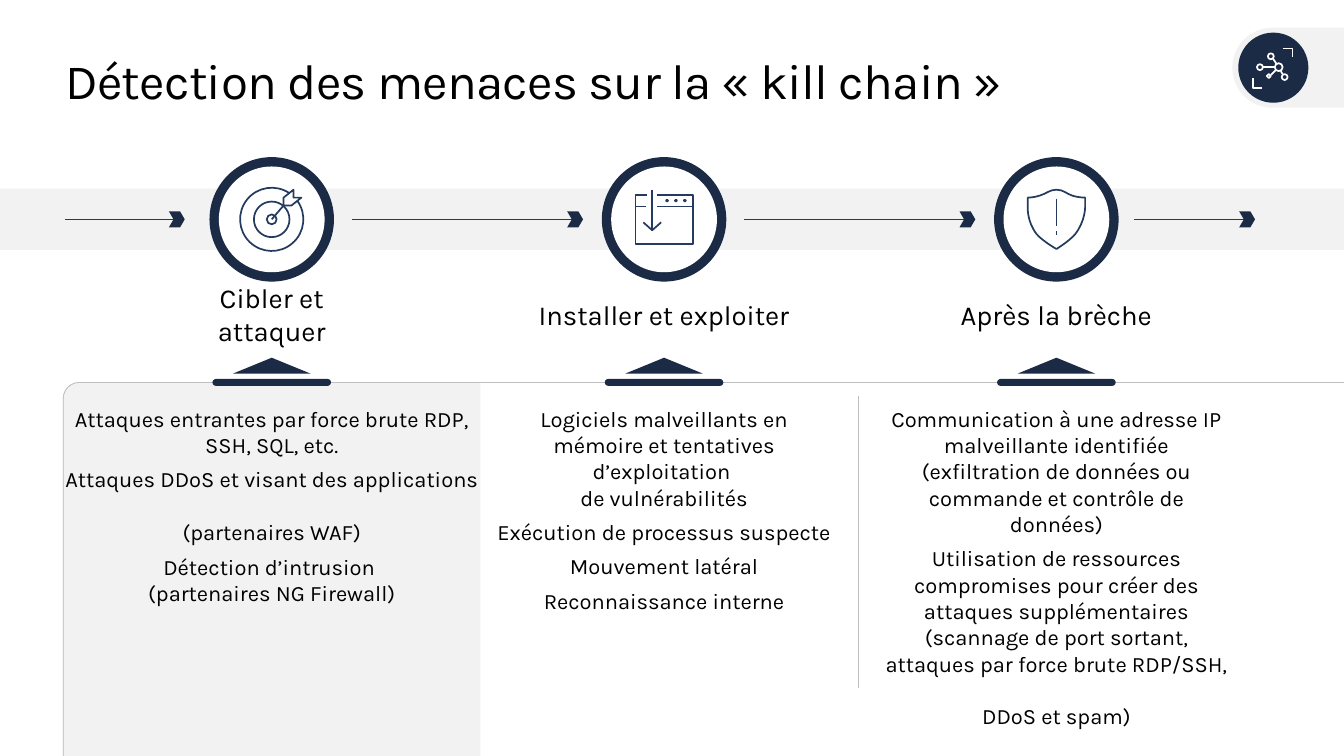
from math import ceil, cos, radians, sin, tan

from lxml.etree import SubElement
from pptx import Presentation
from pptx.dml.color import RGBColor
from pptx.enum.shapes import MSO_CONNECTOR, MSO_SHAPE
from pptx.enum.text import MSO_ANCHOR, MSO_AUTO_SIZE, PP_ALIGN
from pptx.oxml.ns import qn
from pptx.util import Inches, Pt

# Content: heading, heading width, text width, text height, paragraphs
TITLE = "Détection des menaces sur la «\u00a0kill chain\u00a0»"
STAGES = [
    ("Cibler et attaquer", 2.21, 4.19, 1.78, [
        "Attaques entrantes par force brute RDP, SSH, SQL, etc.",
        "Attaques DDoS et visant des applications \v(partenaires WAF)",
        "Détection d’intrusion \v(partenaires NG Firewall)",
    ]),
    ("Installer et exploiter", 2.55, 3.46, 1.87, [
        "Logiciels malveillants en mémoire et tentatives d’exploitation \vde vulnérabilités",
        "Exécution de processus suspecte",
        "Mouvement latéral",
        "Reconnaissance interne",
    ]),
    ("Après la brèche", 1.96, 3.51, 2.78, [
        "Communication à une adresse IP malveillante identifiée "
        "(exfiltration de données ou commande et contrôle de données)",
        "Utilisation de ressources compromises pour créer des attaques supplémentaires "
        "(scannage de port sortant, attaques par force brute RDP/SSH, \vDDoS et spam)",
    ]),
]
FLOW_SPANS = [(0.66, 1.76), (3.56, 5.79), (7.53, 9.76), (11.48, 12.59)]
COLORS = {"navy": "1B2B46", "ink": "243A5E", "band": "F2F2F2", "rule": "BFBFBF",
          "white": "FFFFFF", "text": "000000", "accent": "0078D4"}
FONT = "Karla"

# Grid
WIDTH, HEIGHT = 13.6, 7.65
CENTERS = [2.75 + 3.97 * column for column in range(3)]
FLOW_Y = 2.22
PANEL_LEFT, PANEL_TOP, PANEL_RIGHT, CORNER = 0.64, 3.87, 4.86, 0.16

presentation = Presentation()
presentation.slide_width, presentation.slide_height = Inches(WIDTH), Inches(HEIGHT)
slide = presentation.slides.add_slide(presentation.slide_layouts[6])


def rgb(name):
    return RGBColor.from_string(COLORS[name])


def style(shape, fill=None, line=None, weight=1.25):
    shape.shadow.inherit = False
    if fill:
        shape.fill.solid()
        shape.fill.fore_color.rgb = rgb(fill)
    else:
        shape.fill.background()
    if line:
        shape.line.color.rgb = rgb(line)
        shape.line.width = Pt(weight)
    else:
        shape.line.fill.background()


def add_preset(kind, left, top, width, height, fill, adjustments=(), **outline):
    shape = slide.shapes.add_shape(kind, *map(Inches, (left, top, width, height)))
    for index, value in enumerate(adjustments):
        shape.adjustments[index] = value
    style(shape, fill, **outline)
    return shape


def add_centered(kind, center, middle, width, height, fill, adjustments=()):
    add_preset(kind, center - width / 2, middle - height / 2, width, height, fill, adjustments)


def add_line(x1, y1, x2, y2, color, weight):
    line = slide.shapes.add_connector(MSO_CONNECTOR.STRAIGHT, *map(Inches, (x1, y1, x2, y2)))
    line.line.color.rgb = rgb(color)
    line.line.width = Pt(weight)
    SubElement(line._element.spPr, qn("a:effectLst"))


def add_text(paragraphs, left, top, width, height, size, align=PP_ALIGN.CENTER, after=0, wrap=True):
    box = slide.shapes.add_textbox(*map(Inches, (left, top, width, height)))
    frame = box.text_frame
    frame.word_wrap = wrap
    frame.auto_size = MSO_AUTO_SIZE.SHAPE_TO_FIT_TEXT
    frame.margin_left = frame.margin_right = frame.margin_top = frame.margin_bottom = 0
    for index, text in enumerate(paragraphs):
        paragraph = frame.paragraphs[0] if index == 0 else frame.add_paragraph()
        paragraph.text = text
        paragraph.alignment = align
        paragraph.space_after = Pt(after)
        paragraph.font.name, paragraph.font.size = FONT, Pt(size)
        paragraph.font.color.rgb = rgb("text")
    return frame


def arc(x, y, radius, start=0, end=360):
    """A start point, then one (control, control, end) curve per quarter turn."""
    count = ceil((end - start) / 90)
    step = radians((end - start) / count)
    reach = 4 / 3 * tan(step / 4)
    ends = [(cos(radians(start) + step * i), sin(radians(start) + step * i)) for i in range(count + 1)]

    def place(u, v):
        return x + radius * u, y + radius * v

    curves = [(place(a - reach * b, b + reach * a), place(c + reach * d, d - reach * c), place(c, d))
              for (a, b), (c, d) in zip(ends, ends[1:])]
    return [place(*ends[0])] + curves


def add_outline(strokes, **look):
    """Each stroke is a start point followed by points (lines) or triples of points (curves)."""
    builder = slide.shapes.build_freeform(*map(Inches, strokes[0][0]))
    curve_flags = []
    for index, (start, *steps) in enumerate(strokes):
        if index:
            builder.move_to(*map(Inches, start))
        points = []
        for step in steps:
            is_curve = len(step) == 3
            curve_flags.append(is_curve)
            points += step if is_curve else [step]
        closed = max(abs(a - b) for a, b in zip(start, points[-1])) < 0.001
        builder.add_line_segments([tuple(map(Inches, point)) for point in points], close=closed)
    shape = builder.convert_to_shape()
    segments = iter(list(shape._element.iter(qn("a:lnTo"))))
    for is_curve in curve_flags:
        segment = next(segments)
        if is_curve:
            segment.tag = qn("a:cubicBezTo")
            for extra in (next(segments), next(segments)):
                segment.append(extra[0])
                extra.getparent().remove(extra)
    style(shape, **look)


# Corner badge, first panel and flow band
badge = add_preset(MSO_SHAPE.ROUND_2_SAME_RECTANGLE, 12.63, 0.12, 0.81, 1.13, "band", (0.5, 0))
badge.rotation = 270
add_preset(MSO_SHAPE.OVAL, 12.53, 0.33, 0.71, 0.71, "navy")
corner = arc(PANEL_LEFT + CORNER, PANEL_TOP + CORNER, CORNER, 180, 270)
add_outline([corner + [(PANEL_RIGHT, PANEL_TOP), (PANEL_RIGHT, HEIGHT), (PANEL_LEFT, HEIGHT), corner[0]]],
            fill="band")
add_preset(MSO_SHAPE.RECTANGLE, 0, 1.91, WIDTH, 0.62, "band")

# Title and panel border
title = add_text([TITLE], 0.66, 0.51, 12.29, 0.62, 36, PP_ALIGN.LEFT)
title.paragraphs[0].font._element.set("spc", "-50")
add_preset(MSO_SHAPE.BENT_ARROW, PANEL_LEFT, PANEL_TOP, WIDTH - PANEL_LEFT, HEIGHT - PANEL_TOP,
           "accent", (0.25, 0, 0.25, 0.043), line="rule", weight=0.5)

# Stages
for center, (heading, heading_width, text_width, text_height, paragraphs) in zip(CENTERS, STAGES):
    add_centered(MSO_SHAPE.OVAL, center, FLOW_Y, 1.26, 1.26, "navy")
    add_centered(MSO_SHAPE.OVAL, center, FLOW_Y, 1.07, 1.07, "white")
    label = add_text([heading], center - heading_width / 2, 3.01, heading_width, 0.34, 20, wrap=False)
    label.vertical_anchor = MSO_ANCHOR.MIDDLE
    add_centered(MSO_SHAPE.ROUNDED_RECTANGLE, center, PANEL_TOP, 1.2, 0.07, "navy", (0.5,))
    add_centered(MSO_SHAPE.ISOSCELES_TRIANGLE, center, 3.7, 0.78, 0.16, "navy")
    add_text(paragraphs, center - text_width / 2, 4.1, text_width, text_height, 16, after=5.9)

# Flow arrows and column divider
for start, end in FLOW_SPANS:
    add_line(start, FLOW_Y, end, FLOW_Y, "ink", 0.75)
    add_centered(MSO_SHAPE.CHEVRON, end + 0.03, FLOW_Y, 0.16, 0.16, "navy", (0.29,))
add_line(8.69, 4.01, 8.69, 6.96, "rule", 0.5)

# Target icon
target_x, window_x, shield_x = CENTERS
add_outline([
    arc(target_x, FLOW_Y, 0.32, -36, 304),
    arc(target_x, FLOW_Y, 0.18),
    arc(target_x, FLOW_Y, 0.05),
    [(target_x, FLOW_Y), (2.87, 2.08)],
    [(3.05, 2), (2.97, 2), (2.97, 1.92), (2.87, 2), (2.87, 2.08), (2.95, 2.08), (3.05, 2)],
], line="ink")

# Window icon
add_outline([
    [(6.65, 1.97), (7.01, 1.97), (7.01, 2.47), (6.43, 2.47), (6.43, 1.97), (6.55, 1.97)],
    [(6.65, 2.09), (7.01, 2.09)],
    [(6.43, 2.09), (6.54, 2.09)],
    *[arc(x, 2.03, 0.01) for x in (6.93, 6.84, 6.75)],
    [(6.51, 2.25), (6.6, 2.33), (6.69, 2.25)],
    [(6.6, 1.92), (6.6, 2.33)],
], line="ink")

# Shield icon
add_outline([
    [(10.49, 2.37), ((10.39, 2.24), (10.4, 2.1), (10.4, 2.1)), (10.4, 2),
     ((10.4, 2), (10.46, 2), (10.52, 1.98)), ((10.59, 1.96), (10.62, 1.92), (10.69, 1.92)),
     ((10.76, 1.92), (10.79, 1.96), (10.85, 1.98)), ((10.91, 2), (10.98, 2), (10.98, 2)),
     (10.98, 2.1), ((10.98, 2.1), (10.98, 2.24), (10.88, 2.37)),
     ((10.82, 2.44), (10.69, 2.52), (10.69, 2.52)), ((10.69, 2.52), (10.55, 2.44), (10.49, 2.37))],
    [(shield_x, 2.01), (shield_x, 2.29)],
    [(shield_x, 2.34), (shield_x, 2.38)],
], line="ink")

# Network icon in the badge
NODES = [(12.94, 0.68, 0.04), (13, 0.78, 0.03), (12.84, 0.77, 0.02), (12.75, 0.68, 0.03), (12.86, 0.57, 0.03)]
add_outline([
    [(12.98, 0.49), (13.08, 0.49), (13.08, 0.58)],
    [(12.68, 0.79), (12.68, 0.89), (12.77, 0.89)],
    *[arc(*node) for node in NODES],
    *[[(12.88, 0.59), (12.92, 0.65)], [(12.98, 0.75), (12.96, 0.72)]],
    *[[(12.86, 0.76), (12.91, 0.71)], [(12.77, 0.68), (12.9, 0.68)]],
], line="white")

presentation.save("out.pptx")
